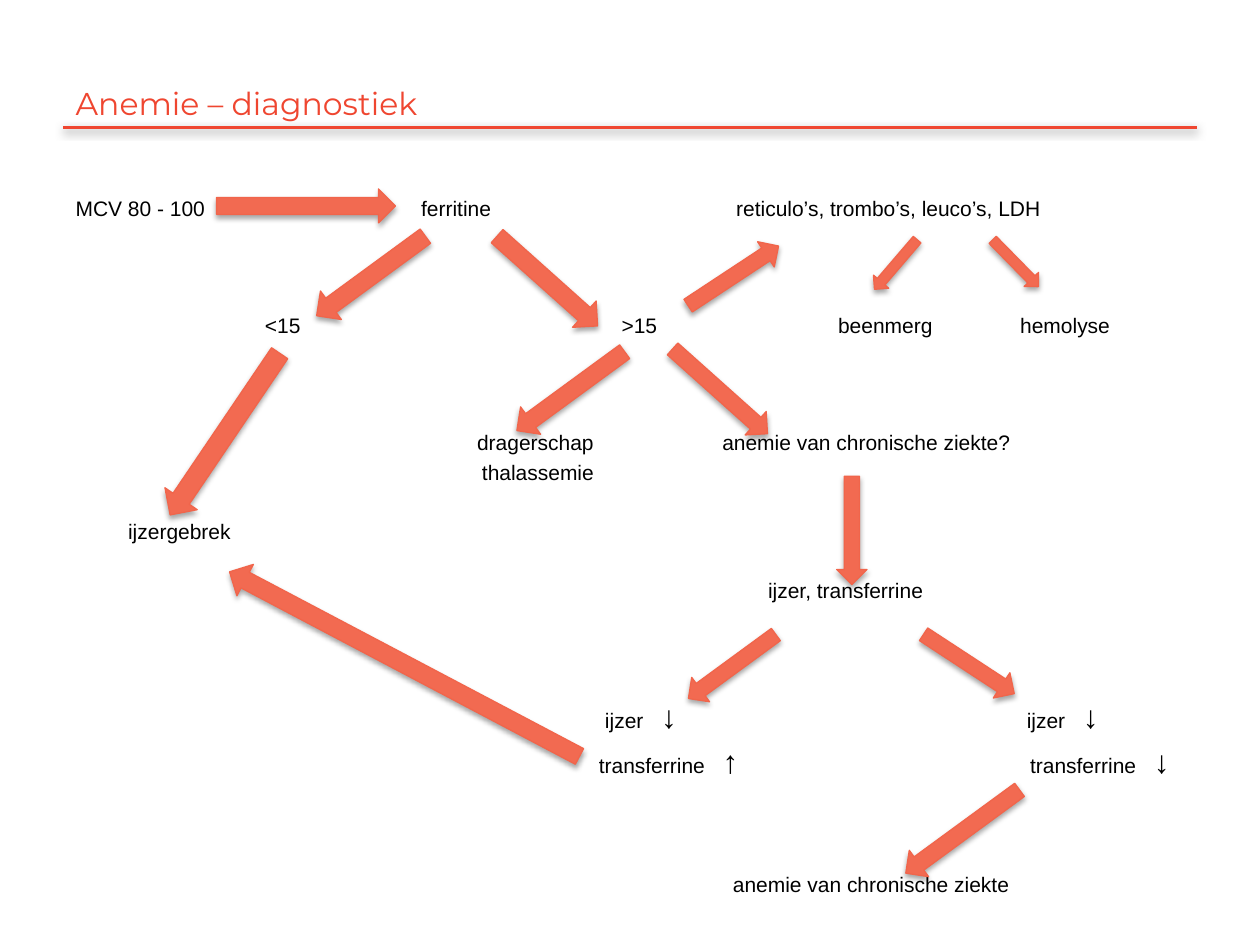
"""Builds the decision diagram for diagnosing anaemia."""
from lxml import etree
from pptx import Presentation
from pptx.dml.color import RGBColor
from pptx.enum.shapes import MSO_CONNECTOR, MSO_SHAPE
from pptx.enum.text import MSO_ANCHOR, MSO_AUTO_SIZE, PP_ALIGN
from pptx.oxml.ns import qn
from pptx.util import Pt

STRAIGHT = MSO_CONNECTOR.STRAIGHT
RIGHT_ARROW = MSO_SHAPE.RIGHT_ARROW
BOTTOM, TOP = MSO_ANCHOR.BOTTOM, MSO_ANCHOR.TOP
NO_AUTOFIT = MSO_AUTO_SIZE.NONE
LEFT = PP_ALIGN.LEFT

RED = RGBColor(0xEF, 0x46, 0x30)
ARROW_FILL = RGBColor(0xF2, 0x6A, 0x51)
ARROW_LINE = RGBColor(0xF1, 0x65, 0x4B)
BLACK = RGBColor(0, 0, 0)

TEXT_SIZE, SYMBOL_SIZE = 12, 18
ROW_PITCH = 16.65
SPACE_WIDTH = 3.33
SYMBOLS = "↓↑"

# Each row: skipped rows, indent, then labels with the gap in points before each.
ROWS = [
    (0, 0, [(0, "MCV 80 - 100"), (123.4, "ferritine"),
            (140, "reticulo’s, trombo’s, leuco’s, LDH")]),
    (3, 108.2, [(0, "<15"), (183.4, ">15"), (103.4, "beenmerg"), (50, "hemolyse")]),
    (3, 229.4, [(0, "dragerschap"), (73.4, "anemie van chronische ziekte?")]),
    (0, 232.2, [(0, "thalassemie")]),
    (1, 30, [(0, "ijzergebrek")]),
    (1, 395.7, [(0, "ijzer, transferrine")]),
    (3, 302.5, [(0, "ijzer"), (10, "↓"), (200, "ijzer"), (10, "↓")]),
    (0, 299, [(0, "transferrine"), (10, "↑"), (166.7, "transferrine"), (10, "↓")]),
    (3, 375.6, [(0, "anemie van chronische ziekte")]),
]

ARROWS = [
    (123.8, 108, 102.2, 19.4, 0),
    (173.5, 147.6, 77, 20.2, 143.8),
    (274.3, 150.5, 77, 20.2, 41.8),
    (375.1, 214.6, 72.7, 18, 41.8),
    (288, 213.8, 76.3, 19.4, 143.8),
    (455.8, 294.5, 61.9, 17.3, 90),
    (388.1, 149, 61.9, 17.3, 326.6),
    (493.2, 145.4, 37.4, 11.5, 130.6),
    (561.6, 144.7, 37.4, 11.5, 45.6),
    (387.4, 372.2, 61.9, 17.3, 143.8),
    (522.7, 370.8, 61.9, 17.3, 33.2),
    (509.8, 465.8, 80.6, 18.7, 143.8),
    (118.1, 369.4, 226.1, 20.2, 207.8),
    (72.7, 236.9, 111.6, 22.3, 124.1),
]


class Diagram:
    """Holds the style and the current page."""

    def __init__(self, page):
        self.page = page

    def place(self, box, left, top, width, height, anchor):
        """Position a placeholder and return its text frame."""
        box.left, box.top, box.width, box.height = map(Pt, (left, top, width, height))
        frame = box.text_frame
        frame.word_wrap = True
        frame.auto_size = NO_AUTOFIT
        frame.vertical_anchor = anchor
        return frame

    def span(self, para, text, name, size, colour):
        """Add one formatted run and return it."""
        span = para.add_run()
        span.text = text
        span.font.name = name
        span.font.size = Pt(size)
        span.font.color.rgb = colour
        return span

    def gap(self, para, width):
        """Add one space stretched to a width by character spacing."""
        span = self.span(para, " ", "Arial", TEXT_SIZE, BLACK)
        spacing = round((width - SPACE_WIDTH) * 100)
        span._r.get_or_add_rPr().set("spc", str(spacing))

    def shadow(self, shape, opacity, blur, distance):
        """Give a shape a soft shadow straight below it."""
        properties = shape._element.spPr
        effects = properties.find(qn("a:effectLst"))
        if effects is None:
            effects = etree.SubElement(properties, qn("a:effectLst"))
        outer = etree.SubElement(
            effects, qn("a:outerShdw"), blurRad=str(Pt(blur)),
            dist=str(Pt(distance)), dir="5400000", rotWithShape="0")
        colour = etree.SubElement(outer, qn("a:srgbClr"), val="000000")
        etree.SubElement(colour, qn("a:alpha"), val=str(opacity * 1000))

    def title(self, text):
        """Fill the title placeholder."""
        frame = self.place(self.page.shapes.title, 36, 22, 648, 51.1, BOTTOM)
        para = frame.paragraphs[0]
        para.alignment = LEFT
        self.span(para, text, "Montserrat", 18, RED)

    def rule(self, left, right, top):
        """Draw the line under the title."""
        line = self.page.shapes.add_connector(
            STRAIGHT, Pt(left), Pt(top), Pt(right), Pt(top))
        line.line.color.rgb = RED
        line.line.width = Pt(2)
        self.shadow(line, 38, 5, 1.6)

    def body(self, rows):
        """Fill the body placeholder with rows of labels."""
        frame = self.place(self.page.placeholders[1], 36, 108, 648, 373, TOP)
        for index, (skipped, indent, labels) in enumerate(rows):
            para = frame.add_paragraph() if index else frame.paragraphs[0]
            self.row(para, indent, labels)
            has_symbol = any(text in SYMBOLS for _, text in labels)
            before = 4.1 if has_symbol else 2.6
            para.space_before = Pt(before + skipped * ROW_PITCH if index else 0)

    def row(self, para, indent, labels):
        """Write one indented row of labels with gaps between them."""
        properties = para._p.get_or_add_pPr()
        properties.set("marL", str(Pt(indent)))
        properties.set("indent", "0")
        etree.SubElement(properties, qn("a:buNone"))
        para.line_spacing = 1.0
        para.alignment = LEFT
        for width, text in labels:
            if width:
                self.gap(para, width)
            size = SYMBOL_SIZE if text in SYMBOLS else TEXT_SIZE
            self.span(para, text, "Arial", size, BLACK)

    def arrow(self, left, top, width, height, angle):
        """Draw a block arrow turned by an angle."""
        arrow = self.page.shapes.add_shape(
            RIGHT_ARROW, Pt(left), Pt(top), Pt(width), Pt(height))
        arrow.rotation = angle
        arrow.fill.solid()
        arrow.fill.fore_color.rgb = ARROW_FILL
        arrow.line.color.rgb = ARROW_LINE
        arrow.line.width = Pt(0.75)
        arrow.shadow.inherit = False
        self.shadow(arrow, 35, 3.1, 1.8)


def main():
    """Build and save the deck."""
    deck = Presentation()
    deck.slide_width, deck.slide_height = Pt(720), Pt(540)
    diagram = Diagram(deck.slides.add_slide(deck.slide_layouts[1]))
    diagram.rule(36, 684, 72.9)
    diagram.title("Anemie – diagnostiek")
    diagram.body(ROWS)
    for arrow in ARROWS:
        diagram.arrow(*arrow)
    deck.save("out.pptx")


if __name__ == "__main__":
    main()
